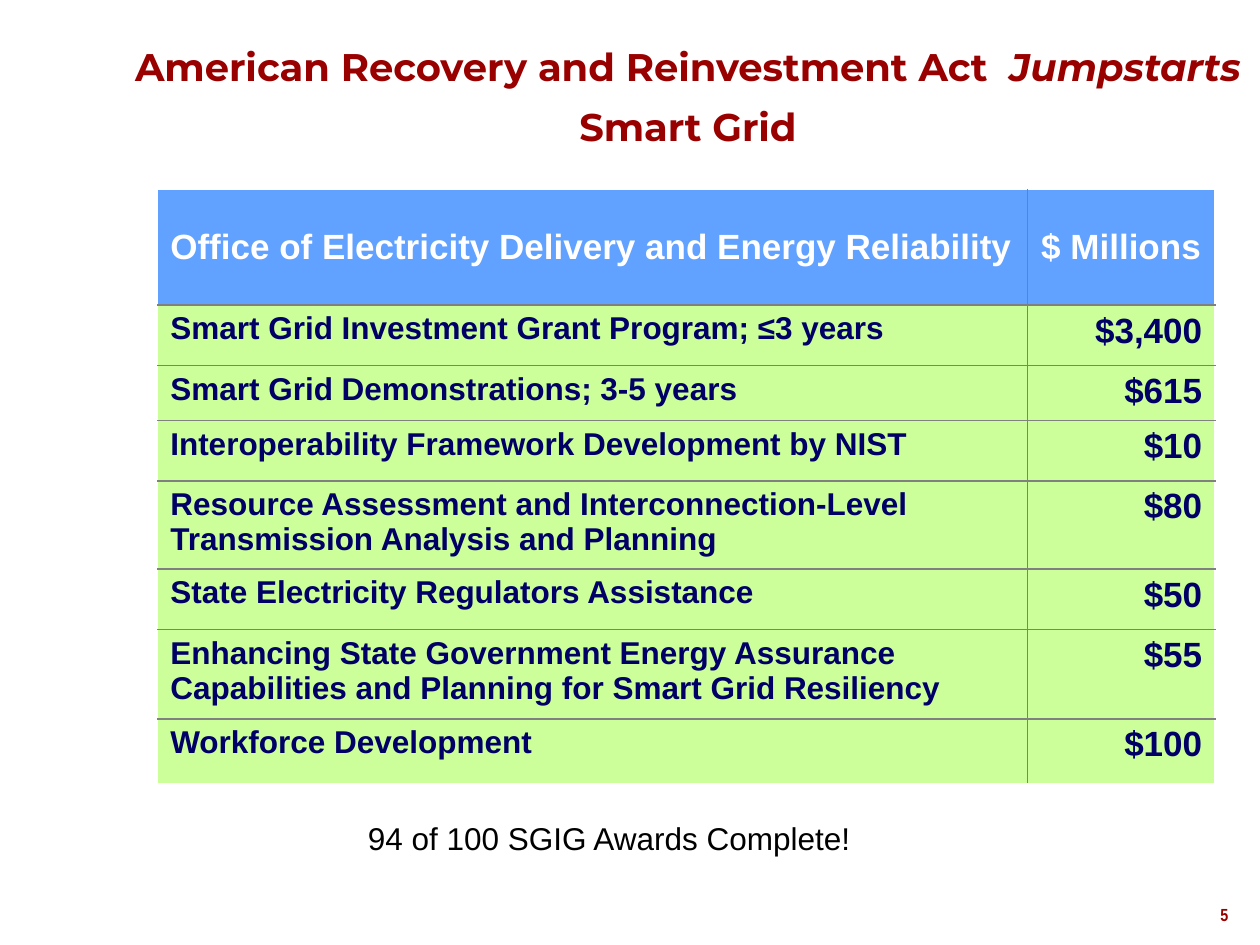
from lxml.etree import SubElement
from pptx import Presentation
from pptx.dml.color import RGBColor
from pptx.enum.text import MSO_ANCHOR as Anchor, PP_ALIGN as Align
from pptx.oxml.ns import qn
from pptx.util import Cm, Pt

PROGRAMS = [
    ("Smart Grid Investment Grant Program; ≤3 years", "$3,400"),
    ("Smart Grid Demonstrations; 3-5 years", "$615"),
    ("Interoperability Framework Development by NIST", "$10"),
    ("Resource Assessment and Interconnection-Level Transmission Analysis and Planning", "$80"),
    ("State Electricity Regulators Assistance", "$50"),
    ("Enhancing State Government Energy Assurance Capabilities and Planning for Smart Grid Resiliency", "$55"),
    ("Workforce Development", "$100"),
]
HEADER = ("Office of Electricity Delivery and Energy Reliability", "$ Millions")
COLUMN_WIDTHS = (17.53, 3.78)
ROW_HEIGHTS = (2.33, 1.22, 1.02, 1.22, 1.22, 1.22, 1.8, 1.3)


def color(value):
    return RGBColor.from_string(value)


class SlideBuilder:
    red, navy, white, black = "990000", "000066", "FFFFFF", "000000"
    blue, green, grey = "61A1FF", "CCFF99", "808080"

    def __init__(self, slide):
        self.slide = slide

    def fill_paragraph(self, paragraph, runs, hue, align, spacing=None, **format_values):
        paragraph.alignment = align
        if spacing:
            paragraph.line_spacing = spacing
        for text, italic in runs:
            run = paragraph.add_run()
            run.text = text
            run.font.color.rgb = color(hue)
            for name, value in {"italic": italic, **format_values}.items():
                setattr(run.font, name, value)

    def text(self, box, runs, hue, spacing, anchor=Anchor.TOP, wrap=True, **format_values):
        frame = self.slide.shapes.add_textbox(*map(Cm, box)).text_frame
        frame.word_wrap = wrap
        frame.vertical_anchor = anchor
        self.fill_paragraph(frame.paragraphs[0], runs, hue, Align.CENTER, spacing, **format_values)

    def borders(self, cell, hues):
        properties = cell._tc.get_or_add_tcPr()
        for side, hue in zip("LRTB", hues):
            line = SubElement(properties, qn(f"a:ln{side}"), w=str(Pt(1)))
            fill = SubElement(line, qn("a:solidFill"))
            SubElement(fill, qn("a:srgbClr"), val=hue)

    def table(self, box, rows, widths, heights):
        table = self.slide.shapes.add_table(len(rows), len(widths), *map(Cm, box)).table
        for column, width in zip(table.columns, widths):
            column.width = Cm(width)
        for row, height in zip(table.rows, heights):
            row.height = Cm(height)
        last_row, last_column = len(rows) - 1, len(widths) - 1
        for i, texts in enumerate(rows):
            for j, text in enumerate(texts):
                cell = table.cell(i, j)
                header = i == 0
                outer = (j == 0, j == last_column, header, i == last_row)
                self.borders(cell, [self.white if edge else self.grey for edge in outer])
                cell.fill.solid()
                cell.fill.fore_color.rgb = color(self.blue if header else self.green)
                cell.vertical_anchor = Anchor.MIDDLE if header else Anchor.TOP
                align = Align.LEFT if j == 0 else Align.CENTER if header else Align.RIGHT
                size = 20 if header or j else 18
                self.fill_paragraph(cell.text_frame.paragraphs[0], [(text, False)],
                                    self.white if header else self.navy, align,
                                    name="Arial", size=Pt(size), bold=True)


def main():
    presentation = Presentation()
    presentation.slide_width, presentation.slide_height = Cm(25.4), Cm(19.05)
    builder = SlideBuilder(presentation.slides.add_slide(presentation.slide_layouts[6]))
    title = [("American Recovery and Reinvestment Act  ", False),
             ("Jumpstarts ", True), ("Smart Grid", False)]
    builder.text((2.34, 0.43, 23.06, 2.72), title, builder.red, 1.3, Anchor.MIDDLE,
                 name="Montserrat", size=Pt(22), bold=True)
    builder.table((3.18, 3.82, 21.31, 11.33), [HEADER, *PROGRAMS], COLUMN_WIDTHS, ROW_HEIGHTS)
    builder.text((24.26, 18.06, 0.84, 0.71), [("5", False)], builder.red, 1.1,
                 name="Arial Narrow", size=Pt(10), bold=True)
    builder.text((7.11, 16.31, 10.34, 1.04), [("94 of 100 SGIG Awards Complete!", False)],
                 builder.black, 1.1, wrap=False, name="Arial", size=Pt(18))
    presentation.save("out.pptx")


if __name__ == "__main__":
    main()
